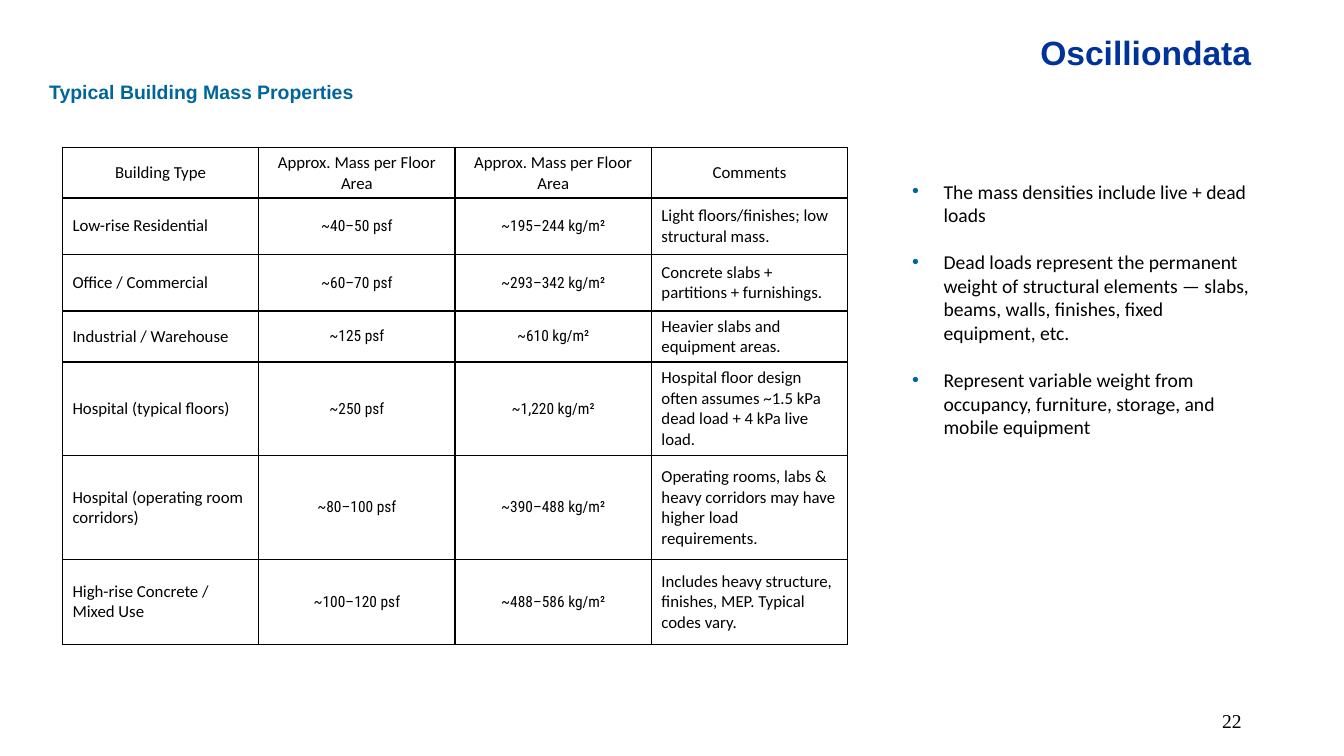
from dataclasses import dataclass

from lxml.etree import SubElement
from pptx import Presentation
from pptx.dml.color import RGBColor
from pptx.enum.text import MSO_ANCHOR as Anchor, MSO_AUTO_SIZE as AutoSize, PP_ALIGN as Align
from pptx.oxml.ns import qn
from pptx.util import Pt


@dataclass(frozen=True)
class Theme:
    """Colours, fonts and type sizes of the deck."""
    ink: str = "000000"
    brand: str = "003399"
    accent: str = "006699"
    heading_font: str = "Arial"
    body_font: str = "Calibri"
    figure_font: str = "Roboto Condensed"
    number_font: str = "Times New Roman"
    heading_size: int = 24
    body_size: int = 14
    cell_size: int = 12
    figure_size: int = 11


THEME = Theme()
COLUMNS = ["Building Type", "Approx. Mass per Floor Area", "Approx. Mass per Floor Area", "Comments"]
BUILDINGS = [
    ("Low-rise Residential", "~40–50 psf", "~195–244 kg/m²",
     "Light floors/finishes; low structural mass."),
    ("Office / Commercial", "~60–70 psf", "~293–342 kg/m²",
     "Concrete slabs + partitions + furnishings."),
    ("Industrial / Warehouse", "~125 psf", "~610 kg/m²",
     "Heavier slabs and equipment areas."),
    ("Hospital (typical floors)", "~250 psf", "~1,220 kg/m²",
     "Hospital floor design often assumes ~1.5 kPa dead load + 4 kPa live load."),
    ("Hospital (operating room corridors)", "~80–100 psf", "~390–488 kg/m²",
     "Operating rooms, labs & heavy corridors may have higher load requirements."),
    ("High-rise Concrete / Mixed Use", "~100–120 psf", "~488–586 kg/m²",
     "Includes heavy structure, finishes, MEP. Typical codes vary."),
]
ROW_HEIGHTS = [35.6, 40.4, 40.4, 36.4, 67, 74, 60.6]
LOAD_NOTES = [
    "The mass densities include live + dead loads",
    "Dead loads represent the permanent weight of structural elements — slabs, beams, walls, "
    "finishes, fixed equipment, etc.",
    "Represent variable weight from occupancy, furniture, storage, and mobile equipment",
]


def style(para, face, size, color=THEME.ink, bold=False, align=Align.LEFT):
    """Set the alignment and font of one paragraph."""
    para.alignment = align
    font = para.font
    font.name, font.size, font.bold = face, Pt(size), bold
    font.color.rgb = RGBColor.from_string(color)


def add_frame(page, box, wrap=True):
    """Add a text box at the given box and return its text frame."""
    frame = page.shapes.add_textbox(*map(Pt, box)).text_frame
    frame.word_wrap = wrap
    return frame


def add_brand(page, box):
    """Place the brand name in the top corner."""
    frame = add_frame(page, box, wrap=False)
    frame.auto_size = AutoSize.SHAPE_TO_FIT_TEXT
    para = frame.paragraphs[0]
    para.text = "Oscilliondata"
    style(para, THEME.heading_font, THEME.heading_size, THEME.brand, bold=True)


def add_heading(page, box):
    """Place the slide heading, lowered as a subscript."""
    para = add_frame(page, box).paragraphs[0]
    span = para.add_run()
    span.text = "Typical Building Mass Properties"
    style(para, THEME.heading_font, THEME.heading_size, THEME.accent, bold=True)
    span.font._element.set("baseline", "-25000")


def add_page_number(page, box):
    """Place the slide number at the bottom right."""
    frame = add_frame(page, box)
    frame.vertical_anchor = Anchor.MIDDLE
    para = frame.paragraphs[0]
    para.text = "22"
    style(para, THEME.number_font, THEME.body_size, align=Align.RIGHT)


def add_borders(cell):
    """Draw a thin line on each side of a table cell."""
    props = cell._tc.get_or_add_tcPr()
    for side in ("a:lnL", "a:lnR", "a:lnT", "a:lnB"):
        line = SubElement(props, qn(side), w=str(Pt(1)))
        fill = SubElement(line, qn("a:solidFill"))
        SubElement(fill, qn("a:srgbClr"), val=THEME.ink)


def add_mass_table(page, box):
    """Build the table of building masses, with equal columns."""
    rows = [COLUMNS, *BUILDINGS]
    table = page.shapes.add_table(len(rows), len(COLUMNS), *map(Pt, box)).table
    table.first_row = table.horz_banding = False
    for column in table.columns:
        column.width = Pt(box[2] / len(COLUMNS))
    for row_index, texts in enumerate(rows):
        table.rows[row_index].height = Pt(ROW_HEIGHTS[row_index])
        for column_index, text in enumerate(texts):
            cell = table.cell(row_index, column_index)
            is_header = row_index == 0
            is_middle = column_index in (1, 2)
            is_figure = is_middle and not is_header
            add_borders(cell)
            cell.fill.background()
            cell.vertical_anchor = Anchor.MIDDLE
            para = cell.text_frame.paragraphs[0]
            para.text = text
            style(para,
                  THEME.figure_font if is_figure else THEME.body_font,
                  THEME.figure_size if is_figure else THEME.cell_size,
                  align=Align.CENTER if is_header or is_middle else Align.LEFT)


def add_bullet(para, indent):
    """Give a paragraph a coloured bullet and a hanging indent."""
    props = para._p.get_or_add_pPr()
    props.set("marL", str(Pt(indent)))
    props.set("indent", str(-Pt(indent)))
    color = SubElement(props, qn("a:buClr"))
    SubElement(color, qn("a:srgbClr"), val=THEME.accent)
    SubElement(props, qn("a:buFont"), typeface="Arial")
    SubElement(props, qn("a:buChar"), char="•")


def add_load_notes(page, box):
    """List the notes on loads beside the table."""
    frame = add_frame(page, box)
    for index, note in enumerate(LOAD_NOTES):
        para = frame.add_paragraph() if index else frame.paragraphs[0]
        para.text = note
        add_bullet(para, 22.5)
        style(para, THEME.body_font, THEME.body_size)
        if index:
            para.space_before = Pt(17)


def build_mass_slide(deck):
    """Add the building mass slide to the deck."""
    page = deck.slides.add_slide(deck.slide_layouts[6])
    add_page_number(page, (678, 500.4, 216, 28.8))
    add_brand(page, (736, 19.4, 169, 36))
    add_heading(page, (28, 37.4, 268, 26.6))
    add_mass_table(page, (44.6, 105.4, 561, sum(ROW_HEIGHTS)))
    add_load_notes(page, (644.4, 124.6, 260, 193.7))


def main():
    """Create and save the deck."""
    deck = Presentation()
    deck.slide_width, deck.slide_height = Pt(960), Pt(540)
    build_mass_slide(deck)
    deck.save("out.pptx")


if __name__ == "__main__":
    main()
